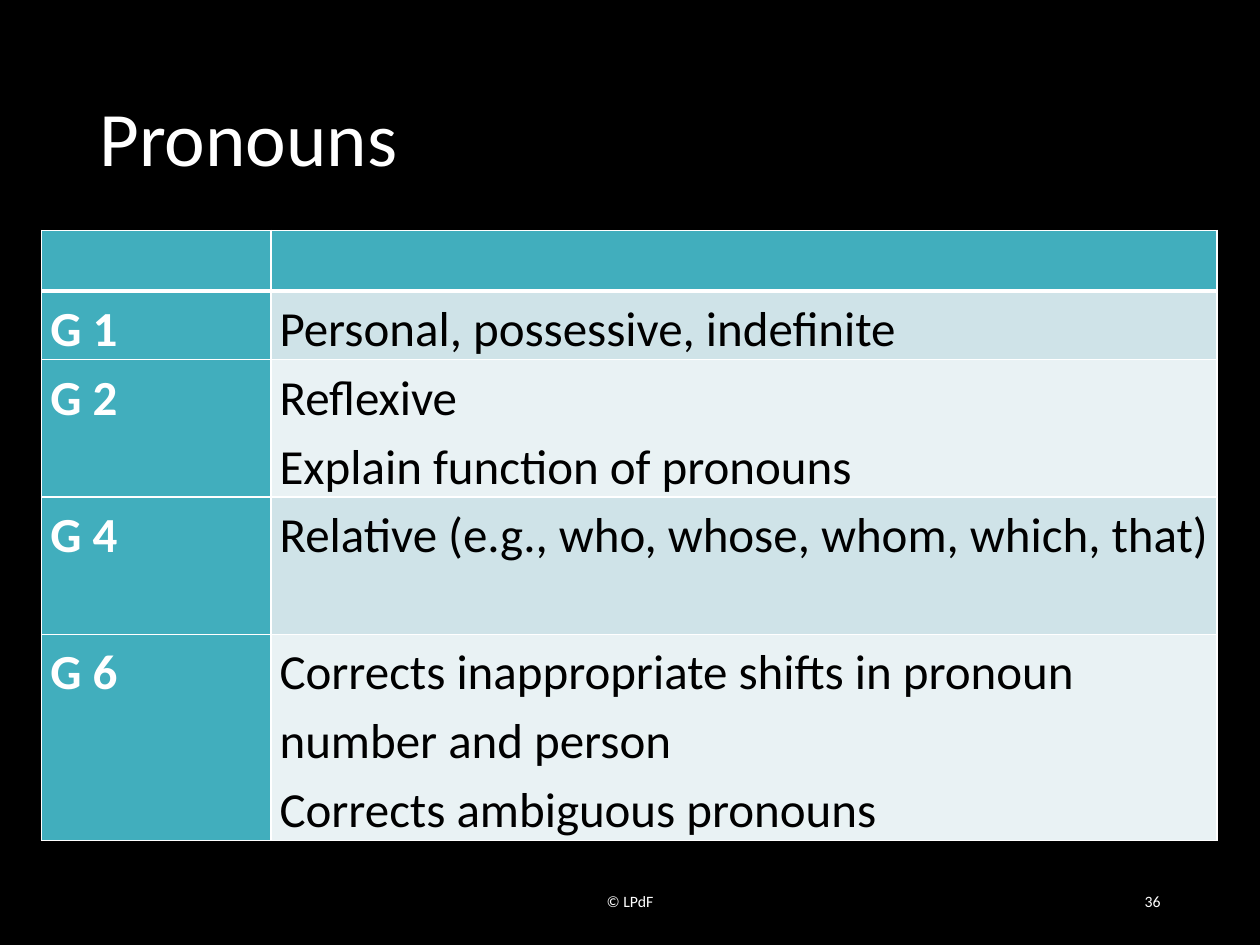
"""Build the Pronouns slide with its table of grade-level skills."""
from lxml.etree import SubElement
from pptx import Presentation
from pptx.dml.color import RGBColor
from pptx.enum.text import MSO_ANCHOR, PP_ALIGN
from pptx.oxml.ns import qn
from pptx.util import Inches, Pt

BLACK = RGBColor(0x00, 0x00, 0x00)
WHITE = RGBColor(0xFF, 0xFF, 0xFF)
TEAL = RGBColor(0x41, 0xAE, 0xBD)
BANDS = [RGBColor(0xCF, 0xE3, 0xE8), RGBColor(0xE9, 0xF2, 0xF4)]

HEAD = 0.48
LINE = 0.545
COLS = [1.82, 7.51]
SKILLS = [
    ("G 1", ["Personal, possessive, indefinite"], 1),
    ("G 2", ["Reflexive", "Explain function of pronouns"], 2),
    ("G 4", ["Relative (e.g., who, whose, whom, which, that)"], 2),
    ("G 6", ["Corrects inappropriate shifts in pronoun number and person",
             "Corrects ambiguous pronouns"], 3),
]


def apply(item, style):
    for name, value in style.items():
        setattr(item, name, value)


def write(frame, lines, size, color, bold=False, **style):
    for i, line in enumerate(lines):
        para = frame.paragraphs[0] if i == 0 else frame.add_paragraph()
        apply(para, style)
        run = para.add_run()
        run.text = line
        apply(run.font, {"name": "Calibri", "size": Pt(size), "bold": bold})
        run.font.color.rgb = color


def add_label(slide, place, text, size, **style):
    frame = slide.shapes.add_textbox(*map(Inches, place)).text_frame
    apply(frame, {"word_wrap": True, "vertical_anchor": MSO_ANCHOR.MIDDLE})
    write(frame, [text], size, WHITE, **style)


def add_edge(cell, side, width):
    props = cell._tc.get_or_add_tcPr()
    edge = SubElement(props, qn(f"a:ln{side}"), w=str(Pt(width)))
    fill = SubElement(edge, qn("a:solidFill"))
    SubElement(fill, qn("a:srgbClr"), val=str(WHITE))


def paint(cell, color, top=1, bottom=1):
    for side, width in {"L": 1, "R": 1, "T": top, "B": bottom}.items():
        add_edge(cell, side, width)
    cell.fill.solid()
    cell.fill.fore_color.rgb = color


def fill_cell(cell, lines, color, bold):
    apply(cell, {"margin_left": Inches(0.07), "margin_right": Inches(0.07),
                 "margin_top": 0, "margin_bottom": 0})
    write(cell.text_frame, lines, 28, color, bold, line_spacing=1.15)


def add_skills(slide):
    heights = [HEAD] + [LINE * count for _, _, count in SKILLS]
    place = (0.33, 1.83, sum(COLS), sum(heights))
    table = slide.shapes.add_table(
        len(heights), len(COLS), *map(Inches, place)).table
    for col, width in zip(table.columns, COLS):
        col.width = Inches(width)
    for row, height in zip(table.rows, heights):
        row.height = Inches(height)
    for cell in table.rows[0].cells:
        paint(cell, TEAL, bottom=3)
    for i, (grade, lines, _) in enumerate(SKILLS):
        left, right = table.rows[i + 1].cells
        top = 3 if i == 0 else 1
        paint(left, TEAL, top)
        paint(right, BANDS[i % 2], top)
        fill_cell(left, [grade], WHITE, True)
        fill_cell(right, lines, BLACK, False)


def main():
    deck = Presentation()
    apply(deck, {"slide_width": Inches(10), "slide_height": Inches(7.5)})
    slide = deck.slides.add_slide(deck.slide_layouts[6])
    slide.background.fill.solid()
    slide.background.fill.fore_color.rgb = BLACK
    add_label(slide, (0.69, 0.4, 8.62, 1.45), "Pronouns", 44, line_spacing=0.9)
    add_skills(slide)
    add_label(slide, (3.31, 6.95, 3.38, 0.4), "© LPdF", 9,
              alignment=PP_ALIGN.CENTER)
    add_label(slide, (7.06, 6.95, 2.25, 0.4), "36", 9,
              alignment=PP_ALIGN.RIGHT)
    deck.save("out.pptx")


if __name__ == "__main__":
    main()
